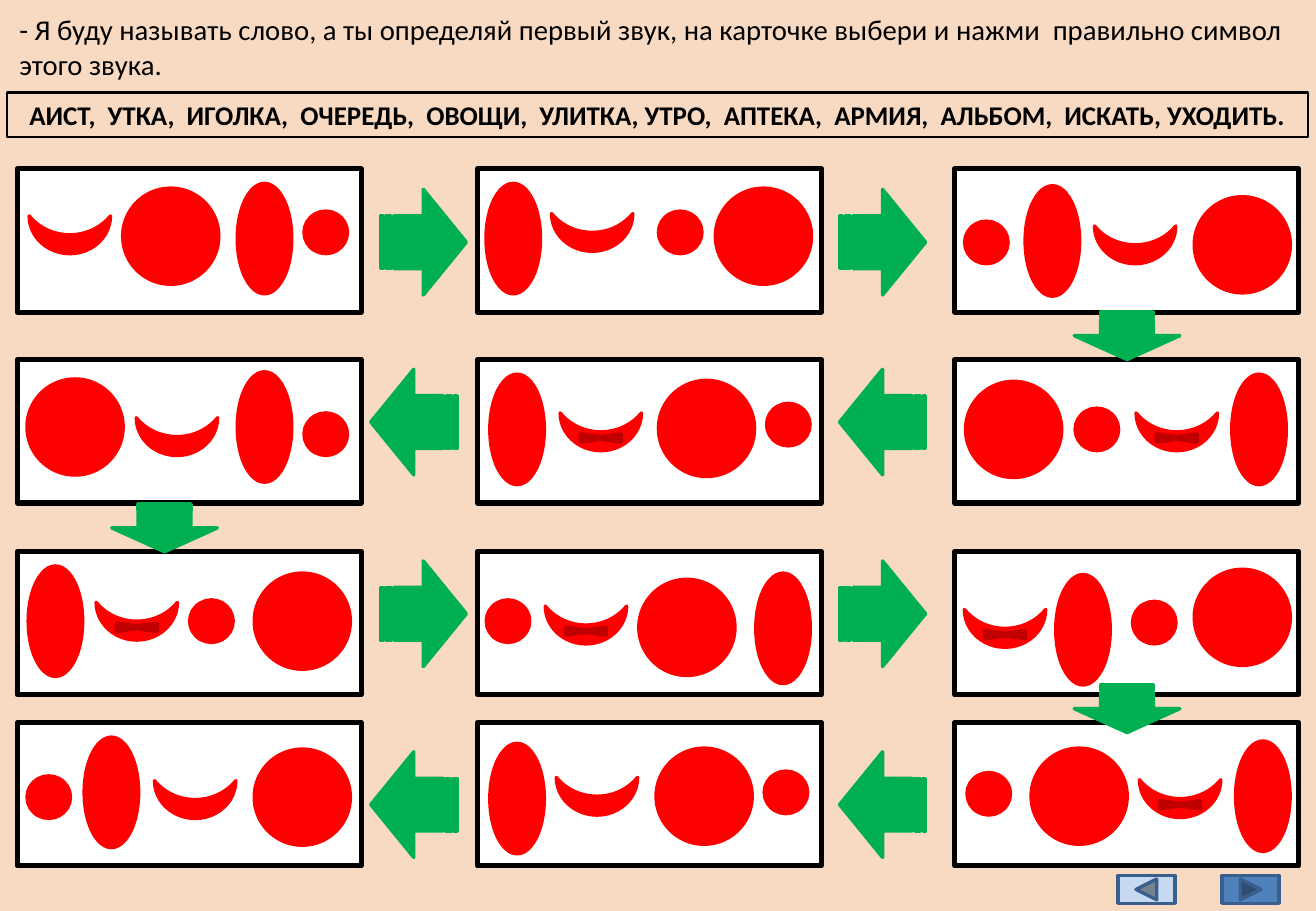
from dataclasses import dataclass

from pptx import Presentation
from pptx.dml.color import RGBColor
from pptx.enum.shapes import MSO_SHAPE
from pptx.enum.text import MSO_ANCHOR, MSO_AUTO_SIZE, PP_ALIGN
from pptx.util import Cm, Pt

RECT = MSO_SHAPE.RECTANGLE
ELLIPSE = MSO_SHAPE.OVAL
MOON = MSO_SHAPE.MOON
CROSS = MSO_SHAPE.MATH_MULTIPLY
ARROW = MSO_SHAPE.STRIPED_RIGHT_ARROW
NEXT = MSO_SHAPE.ACTION_BUTTON_FORWARD_OR_NEXT
BACK = MSO_SHAPE.ACTION_BUTTON_BACK_OR_PREVIOUS
LEFT, CENTER = PP_ALIGN.LEFT, PP_ALIGN.CENTER
TOP, MIDDLE = MSO_ANCHOR.TOP, MSO_ANCHOR.MIDDLE
NO_FIT = MSO_AUTO_SIZE.NONE


@dataclass(frozen=True)
class Theme:
    font: str = "Calibri"
    task: int = 17
    words: int = 16
    ground: str = "F8DAC2"
    ink: str = "000000"
    paper: str = "FFFFFF"
    symbol: str = "FF0000"
    cross: str = "C00000"
    arrow: str = "00B050"
    next: str = "4F81BD"
    back: str = "C6D9F1"
    edge: str = "3A5F8C"


THEME = Theme()
TASK = ("- Я буду называть слово, а ты определяй первый звук, на карточке "
        "выбери и нажми  правильно символ этого звука.")
WORDS = ("АИСТ,  УТКА,  ИГОЛКА,  ОЧЕРЕДЬ,  ОВОЩИ,  УЛИТКА, УТРО,  АПТЕКА,  "
         "АРМИЯ,  АЛЬБОМ,  ИСКАТЬ, УХОДИТЬ.")

COLS = (0.36, 9.98, 19.96)
ROWS = (3.53, 7.52, 11.53, 15.11)
CARD_W, CARD_H = 7.19, 3.0
ARROW_W, ARROW_H = 1.8, 2.21

# Symbol name: shape, width, height, rotation
SYMBOLS = {
    "big": (ELLIPSE, 2.01, 2.01, 0),
    "oval": (ELLIPSE, 1.14, 2.31, 0),
    "dot": (ELLIPSE, 0.91, 0.89, 0),
    "moon": (MOON, 0.79, 1.7, 270),
    "crossed": (MOON, 0.79, 1.7, 270),
}

# Symbols of each card, row by row: name and centre within the card
CARDS = (
    ((("moon", 1.1, 1.38), ("big", 3.21, 1.41), ("oval", 5.17, 1.46), ("dot", 6.45, 1.33)),
     (("oval", 0.75, 1.46), ("moon", 2.4, 1.33), ("dot", 4.24, 1.33), ("big", 5.98, 1.41)),
     (("dot", 0.66, 1.54), ("oval", 2.04, 1.51), ("moon", 3.77, 1.59), ("big", 6.01, 1.59))),
    ((("big", 1.21, 1.41), ("moon", 3.34, 1.61), ("oval", 5.17, 1.41), ("dot", 6.45, 1.56)),
     (("oval", 0.83, 1.46), ("crossed", 2.58, 1.51), ("big", 4.79, 1.44), ("dot", 6.5, 1.36)),
     (("big", 1.23, 1.46), ("dot", 2.97, 1.46), ("crossed", 4.64, 1.51), ("oval", 6.36, 1.46))),
    ((("oval", 0.8, 1.46), ("crossed", 2.5, 1.46), ("dot", 4.06, 1.46), ("big", 5.96, 1.46)),
     (("dot", 0.64, 1.46), ("crossed", 2.27, 1.54), ("big", 4.38, 1.59), ("oval", 6.39, 1.61)),
     (("crossed", 1.05, 1.61), ("oval", 2.68, 1.64), ("dot", 4.17, 1.49), ("big", 6.01, 1.38))),
    ((("dot", 0.66, 1.56), ("oval", 1.97, 1.46), ("moon", 3.72, 1.61), ("big", 5.96, 1.56)),
     (("oval", 0.83, 1.59), ("moon", 2.5, 1.54), ("big", 4.74, 1.54), ("dot", 6.45, 1.46)),
     (("dot", 0.71, 1.49), ("big", 2.6, 1.54), ("crossed", 4.71, 1.59), ("oval", 6.44, 1.54))),
)

# Each row: rotation, left edges, and drop below the row top
ACROSS = (
    (0, (7.95, 17.55), 0.43),
    (180, (7.75, 17.55), 0.2),
    (0, (7.95, 17.55), 0.2),
    (180, (7.75, 17.55), 0.61),
)
# Centres of the arrows that lead to the next row
DOWN = ((23.56, 7.02), (3.44, 11.04), (23.56, 14.82))


def draw(slide, kind, x, y, w, h, fill, line, width=2, turn=0):
    shape = slide.shapes.add_shape(kind, Cm(x), Cm(y), Cm(w), Cm(h))
    shape.shadow.inherit = False
    shape.rotation = turn
    if fill:
        shape.fill.solid()
        shape.fill.fore_color.rgb = RGBColor.from_string(fill)
    else:
        shape.fill.background()
    shape.line.color.rgb = RGBColor.from_string(line)
    shape.line.width = Pt(width)
    return shape


def center(slide, kind, x, y, w, h, color, turn=0):
    """Draw a shape of one colour around the point x, y."""
    draw(slide, kind, x - w / 2, y - h / 2, w, h, color, color, turn=turn)


def write(shape, text, size, align, anchor, bold=False):
    frame = shape.text_frame
    frame.text = text
    frame.word_wrap = True
    frame.auto_size = NO_FIT
    frame.vertical_anchor = anchor
    par = frame.paragraphs[0]
    par.alignment = align
    par.font.name = THEME.font
    par.font.size = Pt(size)
    par.font.bold = bold
    par.font.color.rgb = RGBColor.from_string(THEME.ink)


def header(slide, x, y, w):
    title = slide.shapes.title
    title.left, title.top = Cm(x), Cm(y)
    title.width, title.height = Cm(w), Cm(1.7)
    write(title, TASK, THEME.task, LEFT, TOP)
    banner = draw(slide, RECT, x, y + 1.8, w - 0.17, 0.94, None, THEME.ink, 1.5)
    write(banner, WORDS, THEME.words, CENTER, MIDDLE, bold=True)


def card(slide, x, y, items):
    draw(slide, RECT, x, y, CARD_W, CARD_H, THEME.paper, THEME.ink, 3)
    for name, dx, dy in items:
        kind, w, h, turn = SYMBOLS[name]
        center(slide, kind, x + dx, y + dy, w, h, THEME.symbol, turn)
        if name == "crossed":
            center(slide, CROSS, x + dx, y + dy + 0.13, 1.65, 0.23, THEME.cross)


def route(slide):
    """Draw the arrows that lead from card to card."""
    for y, (turn, lefts, drop) in zip(ROWS, ACROSS):
        for x in lefts:
            draw(slide, ARROW, x, y + drop, ARROW_W, ARROW_H,
                 THEME.arrow, THEME.arrow, turn=turn)
    for x, y in DOWN:
        center(slide, ARROW, x, y, 1, ARROW_H, THEME.arrow, 90)


def buttons(slide, x, y):
    for i, (kind, fill) in enumerate(((BACK, THEME.back), (NEXT, THEME.next))):
        draw(slide, kind, x + 2.18 * i, y, 1.19, 0.58, fill, THEME.edge)


def main():
    deck = Presentation()
    deck.slide_width, deck.slide_height = Cm(27.51), Cm(19.05)
    slide = deck.slides.add_slide(deck.slide_layouts[5])
    ground = slide.background.fill
    ground.solid()
    ground.fore_color.rgb = RGBColor.from_string(THEME.ground)
    header(slide, 0.15, 0.13, 27.36)
    for y, row in zip(ROWS, CARDS):
        for x, items in zip(COLS, row):
            card(slide, x, y, items)
    route(slide)
    buttons(slide, 23.37, 18.31)
    deck.save("out.pptx")


if __name__ == "__main__":
    main()
